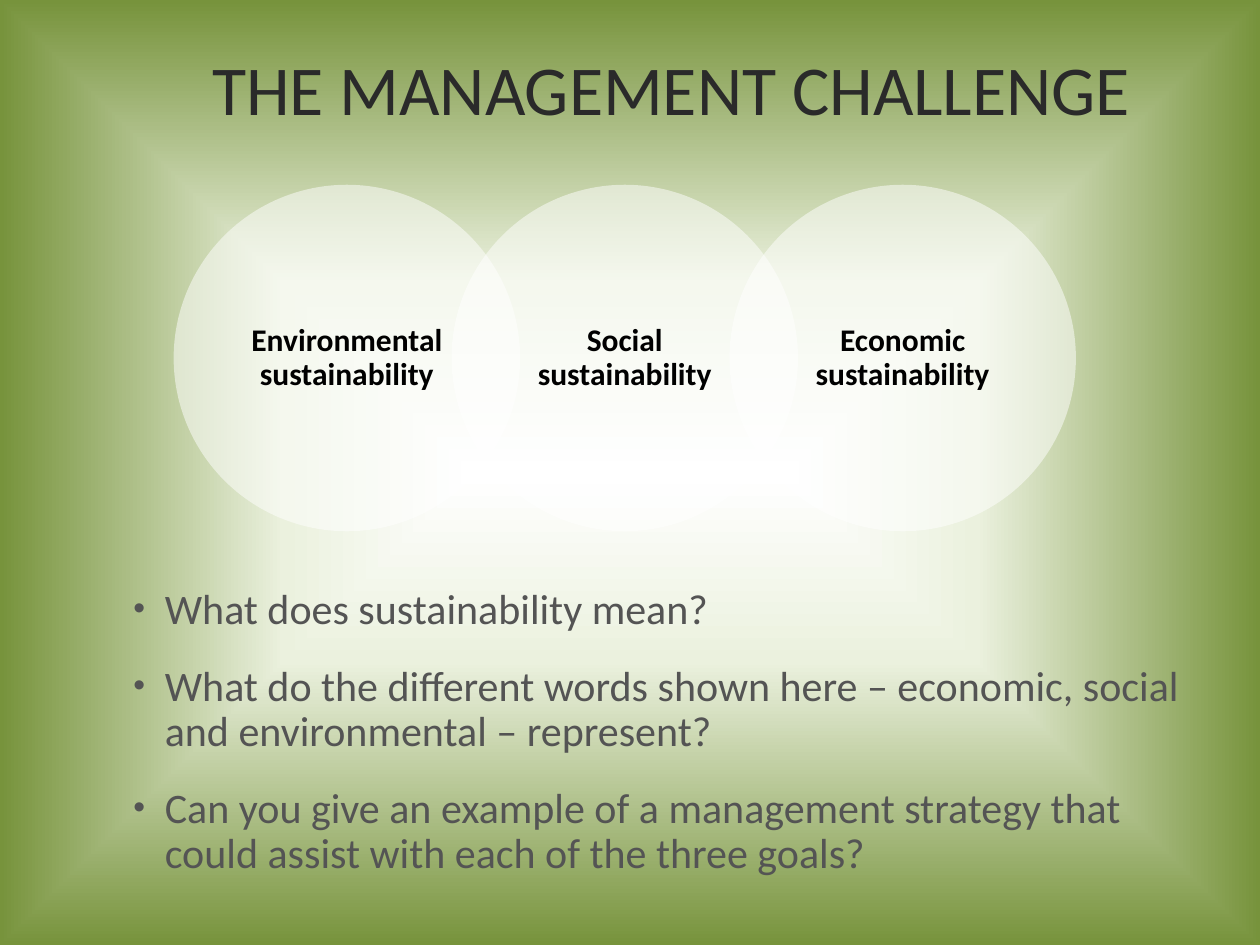
from lxml import etree
from pptx import Presentation
from pptx.dml.color import RGBColor
from pptx.enum.shapes import MSO_SHAPE
from pptx.enum.text import MSO_ANCHOR, PP_ALIGN
from pptx.oxml import parse_xml
from pptx.oxml.ns import nsdecls, qn
from pptx.util import Pt

OVAL = MSO_SHAPE.OVAL
CENTER, LEFT = PP_ALIGN.CENTER, PP_ALIGN.LEFT
TOP, MIDDLE, BOTTOM = MSO_ANCHOR.TOP, MSO_ANCHOR.MIDDLE, MSO_ANCHOR.BOTTOM

FONT = "Calibri"
BLANK_LAYOUT = 6
BODY_GREY = "545454"
GRADIENT_STOPS = [(0, "FFFFFF"), (40, "EBF1DE"), (100, "77933C")]
GOALS = ["Environmental sustainability", "Social sustainability",
         "Economic sustainability"]
QUESTIONS = [
    "What does sustainability mean?",
    "What do the different words shown here – economic, social and "
    "environmental – represent?",
    "Can you give an example of a management strategy that could assist "
    "with each of the three goals?",
]


def color(value):
    return RGBColor.from_string(value)


def add_background(slide):
    """Fill the slide with a gradient that spreads from its centre."""
    stops = "".join(
        f'<a:gs pos="{position * 1000}"><a:srgbClr val="{value}"/></a:gs>'
        for position, value in GRADIENT_STOPS)
    background = parse_xml(
        f'<p:bg {nsdecls("p", "a")}><p:bgPr><a:gradFill rotWithShape="1">'
        f'<a:gsLst>{stops}</a:gsLst><a:path path="shape">'
        '<a:fillToRect l="50000" t="50000" r="50000" b="50000"/></a:path>'
        '</a:gradFill><a:effectLst/></p:bgPr></p:bg>')
    slide.element.cSld.insert(0, background)


def add_text_frame(shapes, box, anchor):
    frame = shapes.add_textbox(*map(Pt, box)).text_frame
    frame.word_wrap = True
    frame.vertical_anchor = anchor
    return frame


def write_paragraph(paragraph, text, size, text_color, align, bold=False):
    paragraph.alignment = align
    paragraph.line_spacing = 0.9
    run = paragraph.add_run()
    run.text = text
    run.font.name = FONT
    run.font.size = Pt(size)
    run.font.bold = bold
    run.font.color.rgb = color(text_color)


def add_bullet(paragraph):
    properties = paragraph._p.get_or_add_pPr()
    properties.set("marL", str(Pt(21.6)))
    properties.set("indent", str(Pt(-18)))
    bullet_color = etree.SubElement(properties, qn("a:buClr"))
    etree.SubElement(bullet_color, qn("a:srgbClr"), val=BODY_GREY)
    etree.SubElement(properties, qn("a:buSzPct"), val="80000")
    etree.SubElement(properties, qn("a:buFont"), typeface="Arial")
    etree.SubElement(properties, qn("a:buChar"), char="•")


def add_title(slide, box):
    """Write the title above an empty last line of the same size."""
    size = 40
    paragraph = add_text_frame(slide.shapes, box, BOTTOM).paragraphs[0]
    write_paragraph(paragraph, "THE MANAGEMENT CHALLENGE", size, "2A2A2A",
                    CENTER)
    paragraph.add_line_break()
    etree.SubElement(paragraph._p, qn("a:endParaRPr"), sz=str(size * 100))


def add_circle(shapes, left, top, diameter, label):
    circle = shapes.add_shape(OVAL, *map(Pt, (left, top, diameter, diameter)))
    circle.shadow.inherit = False
    circle.fill.solid()
    circle.fill.fore_color.rgb = color("FFFFFF")
    circle.line.fill.background()
    fill_color = circle.element.spPr.find(".//" + qn("a:srgbClr"))
    etree.SubElement(fill_color, qn("a:alpha"), val="50000")

    margin = 29
    side = diameter - 2 * margin
    frame = add_text_frame(shapes, (left + margin, top + margin, side, side),
                           MIDDLE)
    frame.margin_left = frame.margin_right = Pt(10.8)
    frame.margin_top = frame.margin_bottom = Pt(2.2)
    write_paragraph(frame.paragraphs[0], label, 18, "000000", CENTER, True)
    frame.paragraphs[0].space_after = Pt(6.3)


def add_goal_circles(slide, box):
    """Spread overlapping circles, as high as the box, over its width."""
    left, top, width, diameter = box
    step = (width - diameter) / (len(GOALS) - 1)
    group = slide.shapes.add_group_shape()
    for index, goal in enumerate(GOALS):
        add_circle(group.shapes, left + index * step, top, diameter, goal)


def add_questions(slide, box):
    frame = add_text_frame(slide.shapes, box, TOP)
    for index, question in enumerate(QUESTIONS):
        paragraph = frame.add_paragraph() if index else frame.paragraphs[0]
        write_paragraph(paragraph, question, 24, BODY_GREY, LEFT)
        paragraph.space_before = Pt(18)
        add_bullet(paragraph)


def main():
    presentation = Presentation()
    presentation.slide_width = Pt(720)
    presentation.slide_height = Pt(540)
    slide = presentation.slides.add_slide(
        presentation.slide_layouts[BLANK_LAYOUT])
    add_background(slide)
    add_title(slide, (72, 21.6, 622.8, 104.4))
    add_questions(slide, (65.5, 332.6, 617.8, 194.4))
    add_goal_circles(slide, (99.2, 105.6, 515.6, 198))
    presentation.save("out.pptx")


if __name__ == "__main__":
    main()
